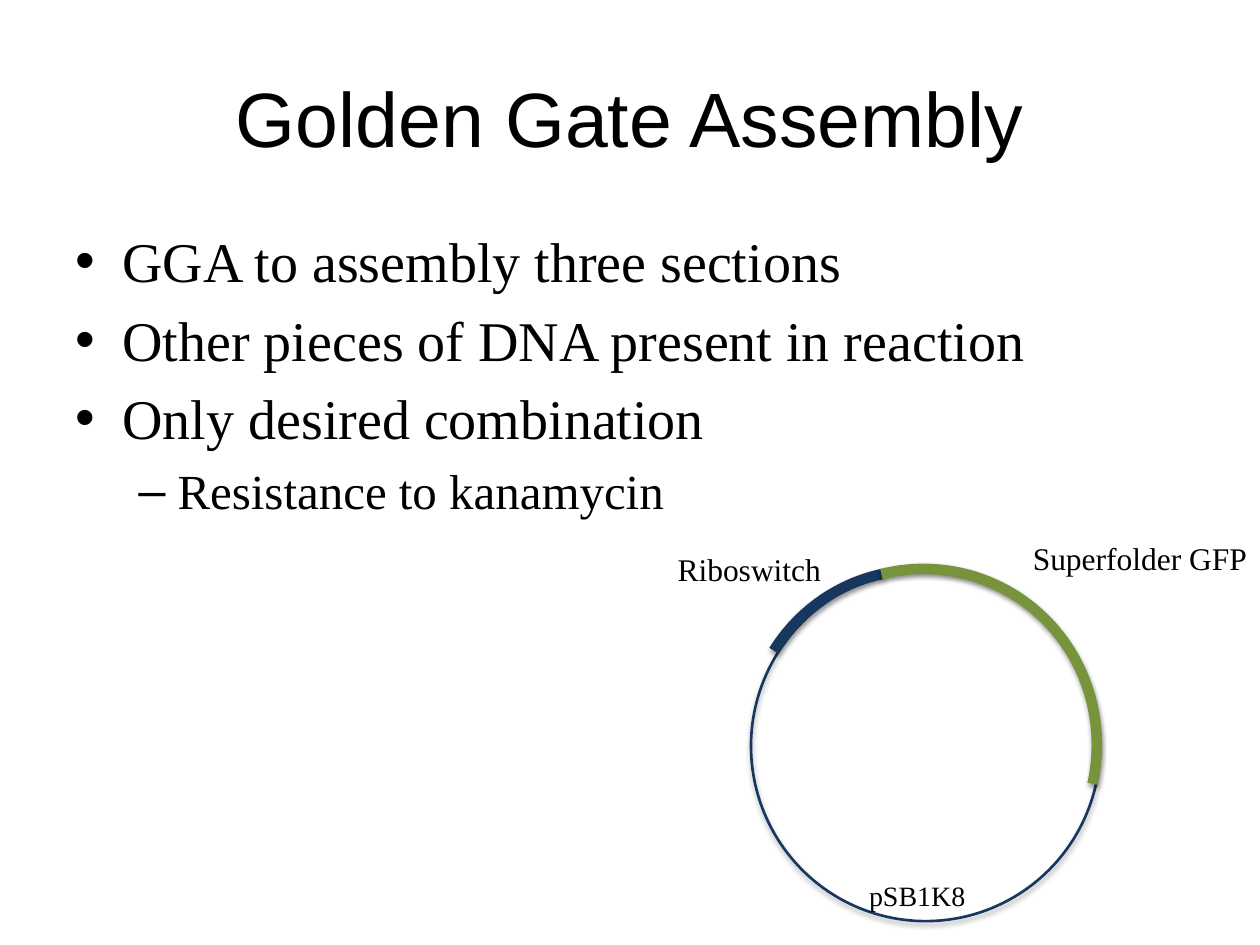
"""Build the Golden Gate Assembly slide with its plasmid ring."""
from lxml import etree
from pptx import Presentation
from pptx import util as u
from pptx.dml.color import RGBColor
from pptx.enum import shapes, text
from pptx.oxml.ns import qn

BLACK = RGBColor(0, 0, 0)
NAVY = RGBColor(0x17, 0x37, 0x5E)
GREEN = RGBColor(0x77, 0x93, 0x3C)
SERIF = "Times New Roman"

TITLE = "Golden Gate Assembly"
POINTS = [
    (0, "GGA to assembly three sections"),
    (0, "Other pieces of DNA present in reaction"),
    (0, "Only desired combination"),
    (1, "Resistance to kanamycin"),
]
LEVELS = [
    {"size": 32, "mark": "•", "left": 0.95, "hang": 0.95},
    {"size": 28, "mark": "–", "left": 2.06, "hang": 0.79},
]
RING = [
    {"kind": "OVAL", "box": (15.14, 11.51, 7.04, 7.06), "turn": 0, "ends": (),
     "color": NAVY, "width": 1.5, "shade": (35, 1.8)},
    {"kind": "ARC", "box": (15.01, 11.56, 6.83, 6.68), "turn": 294.1,
     "ends": (166.91, 195.2), "color": NAVY, "width": 6, "shade": (38, 1.6)},
    {"kind": "ARC", "box": (15.04, 11.46, 7.06, 7.21), "turn": 21.2,
     "ends": (141.53, 210.5), "color": GREEN, "width": 6, "shade": (38, 1.6)},
]
LABELS = [
    ("Riboswitch", (13.41, 10.97, 3.45, 1.02), 18),
    ("Superfolder GFP", (20.57, 10.74, 4.83, 1.02), 18),
    ("pSB1K8", (17.27, 17.58, 2.46, 0.94), 16),
]


def span(box):
    return [u.Cm(x) for x in box]


def style(item, **vals):
    for name, val in vals.items():
        setattr(item, name, val)


def write(para, words, size, face=SERIF):
    run = para.add_run()
    run.text = words
    style(run.font, size=u.Pt(size), name=face)
    run.font.color.rgb = BLACK


def add_mark(para, left, hang, mark):
    props = para._p.get_or_add_pPr()
    props.set("marL", str(u.Cm(left)))
    props.set("indent", str(-u.Cm(hang)))
    gap = etree.SubElement(props, qn("a:spcBef"))
    etree.SubElement(gap, qn("a:spcPct"), val="20000")
    etree.SubElement(props, qn("a:buFont"), typeface="Arial")
    etree.SubElement(props, qn("a:buChar"), char=mark)


def add_shade(shape, alpha, dist):
    shape.shadow.inherit = False
    effects = shape._element.spPr.find(qn("a:effectLst"))
    shade = etree.SubElement(
        effects, qn("a:outerShdw"), blurRad=str(u.Pt(3.1)),
        dist=str(u.Pt(dist)), dir="5400000", rotWithShape="0")
    color = etree.SubElement(shade, qn("a:srgbClr"), val=str(BLACK))
    etree.SubElement(color, qn("a:alpha"), val=str(alpha * 1000))


def add_title(slide):
    title = slide.shapes.title
    place = zip(("left", "top", "width", "height"), span((1.27, 0.76, 22.86, 3.18)))
    style(title, **dict(place))
    title.text_frame.vertical_anchor = text.MSO_ANCHOR.MIDDLE
    para = title.text_frame.paragraphs[0]
    para.alignment = text.PP_ALIGN.CENTER
    write(para, TITLE, 44, "Arial")


def add_points(slide):
    frame = slide.shapes.add_textbox(*span((1.27, 4.45, 22.86, 12.57))).text_frame
    frame.word_wrap = True
    for i, (level, words) in enumerate(POINTS):
        para = frame.add_paragraph() if i else frame.paragraphs[0]
        para.level = level
        look = LEVELS[level]
        add_mark(para, look["left"], look["hang"], look["mark"])
        write(para, words, look["size"])


def add_ring(slide):
    for part in RING:
        kind = getattr(shapes.MSO_SHAPE, part["kind"])
        shape = slide.shapes.add_shape(kind, *span(part["box"]))
        shape.rotation = part["turn"]
        for i, end in enumerate(part["ends"]):
            shape.adjustments[i] = end
        shape.fill.background()
        shape.line.color.rgb = part["color"]
        shape.line.width = u.Pt(part["width"])
        add_shade(shape, *part["shade"])


def add_labels(slide):
    for words, box, size in LABELS:
        frame = slide.shapes.add_textbox(*span(box)).text_frame
        style(frame, word_wrap=False, auto_size=text.MSO_AUTO_SIZE.SHAPE_TO_FIT_TEXT)
        write(frame.paragraphs[0], words, size)


def main():
    deck = Presentation()
    style(deck, slide_width=u.Cm(25.4), slide_height=u.Cm(19.05))
    slide = deck.slides.add_slide(deck.slide_layouts[5])
    for step in (add_title, add_points, add_ring, add_labels):
        step(slide)
    deck.save("out.pptx")


if __name__ == "__main__":
    main()
